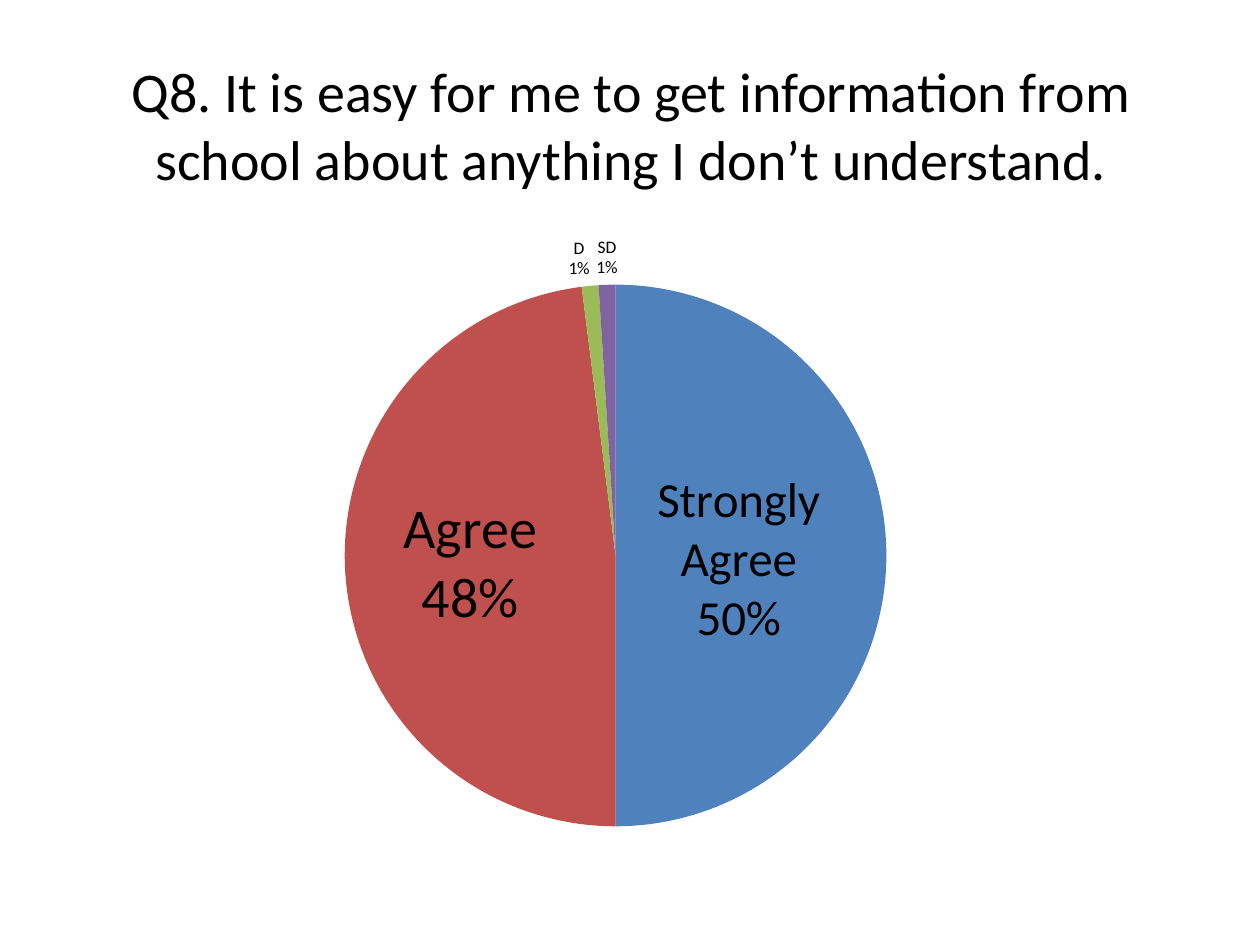
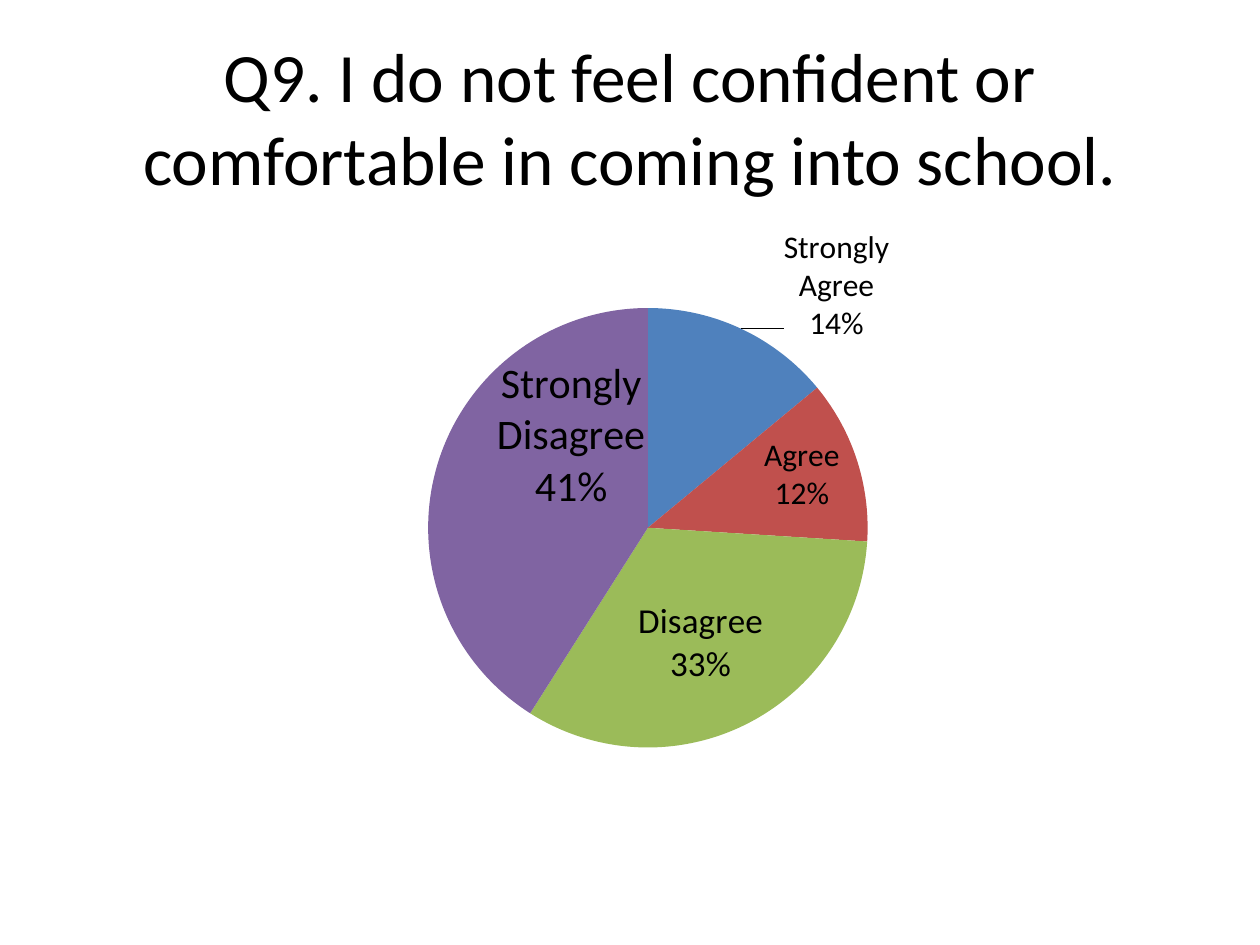
from pptx import Presentation
from pptx.chart.data import CategoryChartData
from pptx.dml.color import RGBColor
from pptx.enum.chart import XL_CHART_TYPE, XL_LABEL_POSITION
from pptx.enum.text import MSO_ANCHOR, MSO_AUTO_SIZE, PP_ALIGN
from pptx.oxml import parse_xml
from pptx.oxml.ns import nsdecls
from pptx.util import Cm, Pt

FONT = "Calibri"
BLACK = RGBColor(0x00, 0x00, 0x00)
BLUE = RGBColor(0x4F, 0x81, 0xBD)
RED = RGBColor(0xC0, 0x50, 0x4D)
GREEN = RGBColor(0x9B, 0xBB, 0x59)
PURPLE = RGBColor(0x80, 0x64, 0xA2)
FILLS = (BLUE, RED, GREEN, PURPLE)
GRADES = ("SA", "A", "D", "SD")

# Boxes are left, top, width, height in cm
CHART_BOX = (1.27, 4.45, 22.86, 12.57)
TITLE = {"word_wrap": True, "auto_size": MSO_AUTO_SIZE.NONE,
         "vertical_anchor": MSO_ANCHOR.MIDDLE}
LABELS = {"show_value": False, "show_percentage": True,
          "show_category_name": True, "number_format": "0%",
          "number_format_is_linked": False,
          "position": XL_LABEL_POSITION.OUTSIDE_END}
SHOWN = {"showVal": "0", "showCatName": "1", "showPercent": "1"}

# pie: left, top, side in cm within the chart box
# notes: slice -> text, size, shift in cm from the middle of the slice
SLIDES = (
    {"text": "Q8. It is easy for me to get information from school "
             "about anything I don’t understand.",
     "size": 32, "box": (1.3, 0.91, 22.86, 3.18),
     "values": (50, 48, 1, 1), "pie": (5.68, 1.29, 10.92),
     "notes": {0: ("Strongly Agree\n50%", 28, -0.25, 0.1),
               1: ("Agree\n48%", 32, -0.2, 0)}},
    {"text": "Q9. I do not feel confident or comfortable in coming "
             "into school.",
     "size": 39.6, "box": (1.27, 0.76, 22.86, 3.18),
     "values": (14, 12, 33, 41), "pie": (7.36, 1.76, 8.86),
     "notes": {0: ("Strongly Agree\n14%", 18, 2.86, -2.88),
               1: ("Agree\n12%", 18, 1.0, -0.4),
               2: ("Disagree\n33%", 20, 0.06, 0.34),
               3: ("Strongly Disagree\n41%", 24, 0.58, -1.23)}},
)


def apply(item, values):
    for name, value in values.items():
        setattr(item, name, value)


def style(font, size):
    apply(font, {"name": FONT, "size": Pt(size), "bold": False})
    font.color.rgb = BLACK


def layout(box, **parts):
    """Manual chart layout, lengths in cm turned into shares of the box."""
    whole = {"x": box[2], "y": box[3], "w": box[2], "h": box[3]}
    tags = "".join(f'<c:{key} val="{parts[key] / whole[key]:.4f}"/>'
                   for key in parts)
    modes = ""
    if "w" in parts:
        modes = ('<c:layoutTarget val="inner"/>'
                 '<c:xMode val="edge"/><c:yMode val="edge"/>')
    return parse_xml(f'<c:layout {nsdecls("c")}><c:manualLayout>'
                     f'{modes}{tags}</c:manualLayout></c:layout>')


def add_title(slide, box, text, size):
    title = slide.shapes.title
    apply(title, dict(zip(("left", "top", "width", "height"), map(Cm, box))))
    frame = title.text_frame
    apply(frame, TITLE)
    frame.text = text
    para = frame.paragraphs[0]
    para.alignment = PP_ALIGN.CENTER
    style(para.runs[0].font, size)


def add_pie(slide, box, values, pie, notes):
    data = CategoryChartData()
    data.categories = GRADES
    data.add_series("Series 1", values)
    chart = slide.shapes.add_chart(
        XL_CHART_TYPE.PIE, *map(Cm, box), data).chart
    apply(chart, {"has_legend": False, "has_title": False})
    style(chart.font, 10)
    plot = chart.plots[0]
    plot.vary_by_categories = True
    series = plot.series[0]

    # Place of the circle
    left, top, side = pie
    area = chart.element.xpath(".//c:plotArea")[0]
    for old in area.xpath("./c:layout"):
        area.remove(old)
    area.insert(0, layout(box, x=left, y=top, w=side, h=side))

    # Slices
    for spot, color in enumerate(FILLS):
        fill = series.points[spot].format.fill
        fill.solid()
        fill.fore_color.rgb = color

    # Labels
    apply(series.data_labels, LABELS)
    style(series.data_labels.font, 10)
    for spot, (text, size, _, _) in notes.items():
        label = series.points[spot].data_label
        label.text_frame.text = text
        label.position = XL_LABEL_POSITION.CENTER
        for para in label.text_frame.paragraphs:
            style(para.runs[0].font, size)
    for tag in chart.element.xpath(".//c:dLbl"):
        spot = int(tag.xpath("./c:idx/@val")[0])
        _, _, right, down = notes[spot]
        tag.insert(1, layout(box, x=right, y=down))
        for name, value in SHOWN.items():
            tag.xpath(f"./c:{name}")[0].set("val", value)


def add_question(deck, text, size, box, values, pie, notes):
    slide = deck.slides.add_slide(deck.slide_layouts[5])
    add_title(slide, box, text, size)
    add_pie(slide, CHART_BOX, values, pie, notes)


def main():
    deck = Presentation()
    apply(deck, {"slide_width": Cm(25.4), "slide_height": Cm(19.05)})
    for question in SLIDES:
        add_question(deck, **question)
    deck.save("out.pptx")


if __name__ == "__main__":
    main()
